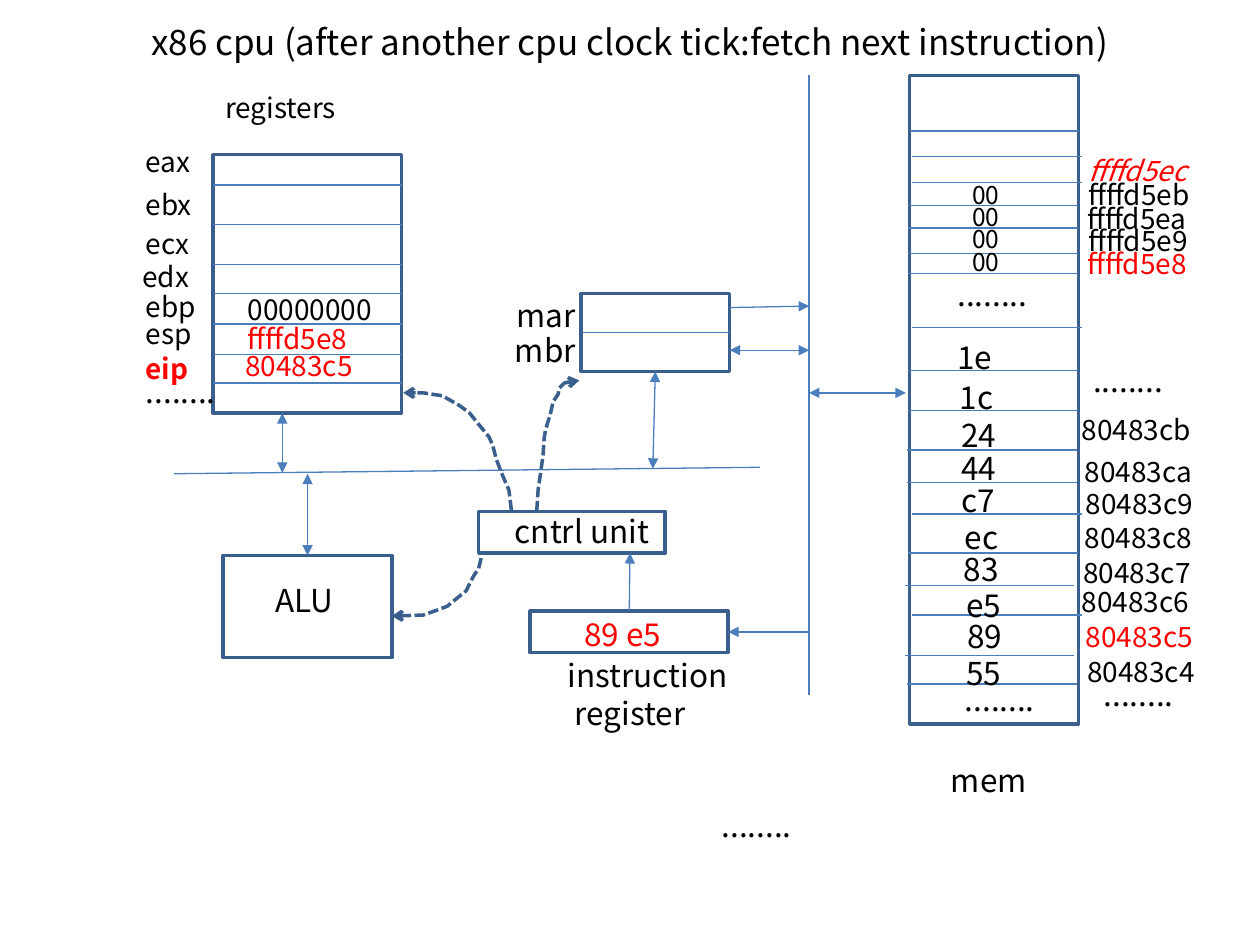
from pptx import Presentation
from pptx.dml.color import RGBColor
from pptx.enum.dml import MSO_LINE
from pptx.enum.shapes import MSO_CONNECTOR, MSO_SHAPE
from pptx.enum.text import MSO_ANCHOR, MSO_AUTO_SIZE, PP_ALIGN
from pptx.oxml.ns import qn
from pptx.oxml.xmlchemy import OxmlElement
from pptx.util import Cm, Pt

RECTANGLE = MSO_SHAPE.RECTANGLE
STRAIGHT = MSO_CONNECTOR.STRAIGHT
DASHED = MSO_LINE.SQUARE_DOT
MIDDLE = MSO_ANCHOR.MIDDLE
CENTER = PP_ALIGN.CENTER
GROW = MSO_AUTO_SIZE.SHAPE_TO_FIT_TEXT
TOP, LEFT, BOTTOM, RIGHT = range(4)

BLACK = RGBColor(0x00, 0x00, 0x00)
WHITE = RGBColor(0xFF, 0xFF, 0xFF)
RED = RGBColor(0xFF, 0x00, 0x00)
OUTLINE = RGBColor(0x3A, 0x5F, 0x8C)
WIRE = RGBColor(0x4B, 0x7E, 0xBC)
FONT = "Noto Sans CJK KR"
DOTS = "........"

# Register name, label left, label top
REGISTER_NAMES = [
    ("eax", 2.69, 2.79), ("ebx", 2.69, 3.66), ("ecx", 2.69, 4.45),
    ("edx", 2.62, 5.11), ("ebp", 2.69, 5.72), ("esp", 2.69, 6.25),
]
REGISTER_RULES = [3.73, 4.52, 5.33, 5.92, 6.53, 7.14, 7.72]

# Left and height of each rule between memory cells
MEMORY_RULES = [
    (18.34, 2.64), (18.39, 3.15), (18.39, 3.68), (18.31, 4.14), (18.31, 4.6),
    (18.31, 5.11), (18.31, 5.51), (18.39, 6.6), (18.31, 7.47), (18.31, 8.28),
    (18.29, 9.07), (18.29, 9.73), (18.39, 10.36), (18.31, 11.15),
    (18.24, 11.81), (18.39, 12.4), (18.24, 13.21), (18.29, 13.79),
]
ADDRESSES = [
    ("ffffd5eb", 21.69, 3.45), ("ffffd5ea", 21.67, 3.94),
    ("ffffd5e9", 21.69, 4.39), ("80483cb", 21.56, 8.2),
    ("80483ca", 21.62, 9.04), ("80483c9", 21.64, 9.68),
    ("80483c8", 21.62, 10.36), ("80483c7", 21.59, 11.07),
    ("80483c6", 21.56, 11.66), ("80483c4", 21.67, 13.08),
]
CODE_BYTES = [
    ("1e", 19.05, 6.68), ("1c", 19.1, 7.49), ("24", 19.13, 8.26),
    ("44", 19.13, 8.92), ("c7", 19.13, 9.58), ("ec", 19.2, 10.31),
    ("83", 19.18, 10.97), ("e5", 19.23, 11.68), ("89", 19.25, 12.32),
    ("55", 19.23, 13.06),
]
STACK_BYTE_TOPS = [3.51, 3.94, 4.39, 4.85]
ELLIPSES = [(2.69, 7.37), (22, 13.49), (21.79, 7.16), (14.3, 16.13),
            (19.05, 5.41), (19.2, 13.59)]

CONTROL_TO_ALU = [
    (9.7, 11.25), (9.65, 11.46), (9.55, 11.61), (9.47, 11.76), (9.4, 11.91),
    (9.14, 12.12), (9.02, 12.22), (8.84, 12.29), (8.53, 12.4), (7.9, 12.42),
]
CONTROL_TO_REGISTERS = [
    (10.31, 10.29), (10.26, 9.88), (10.13, 9.58), (10.01, 9.27), (9.93, 8.97),
    (9.86, 8.81), (9.63, 8.53), (9.47, 8.33), (9.27, 8.18), (8.92, 7.98),
    (8.53, 7.92), (8.13, 7.92),
]
CONTROL_TO_MAR = [
    (10.82, 10.31), (10.85, 9.86), (10.9, 9.53), (10.95, 9.17), (10.97, 8.84),
    (11, 8.66), (11.1, 8.33), (11.15, 8.1), (11.25, 7.95), (11.28, 7.82),
    (11.38, 7.72), (11.68, 7.67),
]


def add_label(slide, text, left, top, width, size=16, color=BLACK,
              bold=False, italic=False):
    """Add a text box with one paragraph per line of text."""
    box = slide.shapes.add_textbox(Cm(left), Cm(top), Cm(width), Cm(0.94))
    frame = box.text_frame
    frame.word_wrap = True
    frame.auto_size = GROW
    for index, line in enumerate(text.split("\n")):
        paragraph = frame.add_paragraph() if index else frame.paragraphs[0]
        run = paragraph.add_run()
        run.text = line
        font = run.font
        font.name, font.size, font.color.rgb = FONT, Pt(size), color
        font.bold, font.italic = bold, italic
    return box


def add_title(slide, text):
    box = add_label(slide, text, 1.27, -0.15, 22.86, 20)
    box.text_frame.auto_size = MSO_AUTO_SIZE.NONE
    box.height = Cm(1.96)
    box.text_frame.vertical_anchor = MIDDLE
    box.text_frame.paragraphs[0].alignment = CENTER


def add_block(slide, left, top, width, height):
    block = slide.shapes.add_shape(
        RECTANGLE, Cm(left), Cm(top), Cm(width), Cm(height))
    block.shadow.inherit = False
    block.fill.solid()
    block.fill.fore_color.rgb = WHITE
    block.line.color.rgb = OUTLINE
    block.line.width = Pt(2)
    return block


def add_arrowhead(shape, end, kind):
    """Put an arrowhead on "headEnd" (start) or "tailEnd" (finish)."""
    head = OxmlElement(f"a:{end}")
    head.set("type", kind)
    shape.element.spPr.find(qn("a:ln")).append(head)


def add_wire(slide, x1, y1, x2, y2, ends=()):
    wire = slide.shapes.add_connector(STRAIGHT, Cm(x1), Cm(y1), Cm(x2), Cm(y2))
    wire.line.color.rgb = WIRE
    wire.line.width = Pt(0.75)
    for end in ends:
        add_arrowhead(wire, end, "triangle")
    wire.element.spPr.append(OxmlElement("a:effectLst"))
    return wire


def add_control_signal(slide, points):
    """Add a dashed curve through the points, with an open arrowhead."""
    start, *others = [(Cm(x), Cm(y)) for x, y in points]
    builder = slide.shapes.build_freeform(*start)
    builder.add_line_segments(others, close=False)
    signal = builder.convert_to_shape()
    signal.shadow.inherit = False
    signal.fill.background()
    signal.line.color.rgb = OUTLINE
    signal.line.width = Pt(2)
    signal.line.dash_style = DASHED
    add_arrowhead(signal, "tailEnd", "arrow")


def add_registers(slide):
    add_block(slide, 4.29, 3.12, 3.81, 5.21)
    for y in REGISTER_RULES:
        add_wire(slide, 4.29, y, 8.1, y)
    add_label(slide, "registers", 4.29, 1.7, 3)
    for name, left, top in REGISTER_NAMES:
        add_label(slide, name, left, top, 2.01)
    add_label(slide, "eip", 2.69, 6.96, 2.01, color=RED, bold=True)
    add_label(slide, "00000000", 4.75, 5.77, 3.12)
    add_label(slide, "ffffd5e8", 4.75, 6.35, 3, color=RED)
    add_label(slide, "80483c5", 4.7, 6.91, 3, color=RED)


def add_memory(slide):
    add_block(slide, 18.34, 1.52, 3.4, 13.08)
    for left, y in MEMORY_RULES:
        add_wire(slide, left, y, left + 3.42, y)
    add_label(slide, "mem", 18.92, 15.21, 2.69, 18)
    for address, left, top in ADDRESSES:
        add_label(slide, address, left, top, 3)
    add_label(slide, "ffffd5ec", 21.69, 2.97, 3, color=RED, italic=True)
    add_label(slide, "ffffd5e8", 21.67, 4.85, 3, color=RED)
    add_label(slide, "80483c5", 21.64, 12.37, 3, color=RED)
    for value, left, top in CODE_BYTES:
        add_label(slide, value, left, top, 1.4, 18)
    for top in STACK_BYTE_TOPS:
        add_label(slide, "00", 19.35, top, 1.35, 14)


def add_units_and_buses(slide):
    both, forward = ("headEnd", "tailEnd"), ("tailEnd",)
    add_wire(slide, 3.51, 9.55, 15.32, 9.42)
    add_wire(slide, 16.31, 1.52, 16.31, 14.02)

    alu = add_block(slide, 4.5, 11.2, 3.4, 2.06)
    mar_mbr = add_block(slide, 11.71, 5.92, 3, 1.57)
    add_block(slide, 9.65, 10.31, 3.76, 0.84)
    instruction = add_block(slide, 10.69, 12.32, 3.99, 0.84)

    divider = add_wire(slide, 11.71, 6.71, 14.71, 6.71)
    divider.begin_connect(mar_mbr, LEFT)
    divider.end_connect(mar_mbr, RIGHT)
    add_wire(slide, 16.31, 12.74, 14.68, 12.74,
             forward).end_connect(instruction, RIGHT)
    add_wire(slide, 12.7, 12.32, 12.7, 11.15,
             forward).begin_connect(instruction, TOP)
    add_wire(slide, 6.2, 9.55, 6.2, 11.2, both).end_connect(alu, TOP)
    add_wire(slide, 13.21, 7.49, 13.16, 9.45,
             both).begin_connect(mar_mbr, BOTTOM)
    add_wire(slide, 14.71, 6.2, 16.31, 6.17, forward)
    add_wire(slide, 14.71, 7.06, 16.31, 7.06, both)
    add_wire(slide, 16.31, 7.92, 18.26, 7.92, both)
    add_wire(slide, 5.69, 8.33, 5.69, 9.53, both)

    add_label(slide, "ALU", 5.31, 11.58, 2.01, 18)
    add_label(slide, "cntrl unit", 10.13, 10.19, 3.33, 18)
    add_label(slide, "mar", 10.16, 5.84, 2.01, 18)
    add_label(slide, "mbr", 10.13, 6.55, 2.01, 18)
    add_label(slide, "instruction\n register", 11.2, 13.11, 3.99, 18)
    add_label(slide, "89 e5", 11.53, 12.27, 2.62, 18, RED)


def main():
    deck = Presentation()
    deck.slide_width, deck.slide_height = Cm(25.4), Cm(19.05)
    slide = deck.slides.add_slide(deck.slide_layouts[6])
    add_title(slide, "x86 cpu (after another cpu clock tick:fetch next instruction)")
    add_registers(slide)
    add_memory(slide)
    add_units_and_buses(slide)
    for points in (CONTROL_TO_ALU, CONTROL_TO_REGISTERS, CONTROL_TO_MAR):
        add_control_signal(slide, points)
    for left, top in ELLIPSES:
        add_label(slide, DOTS, left, top, 2.01, 18)
    deck.save("out.pptx")


if __name__ == "__main__":
    main()
